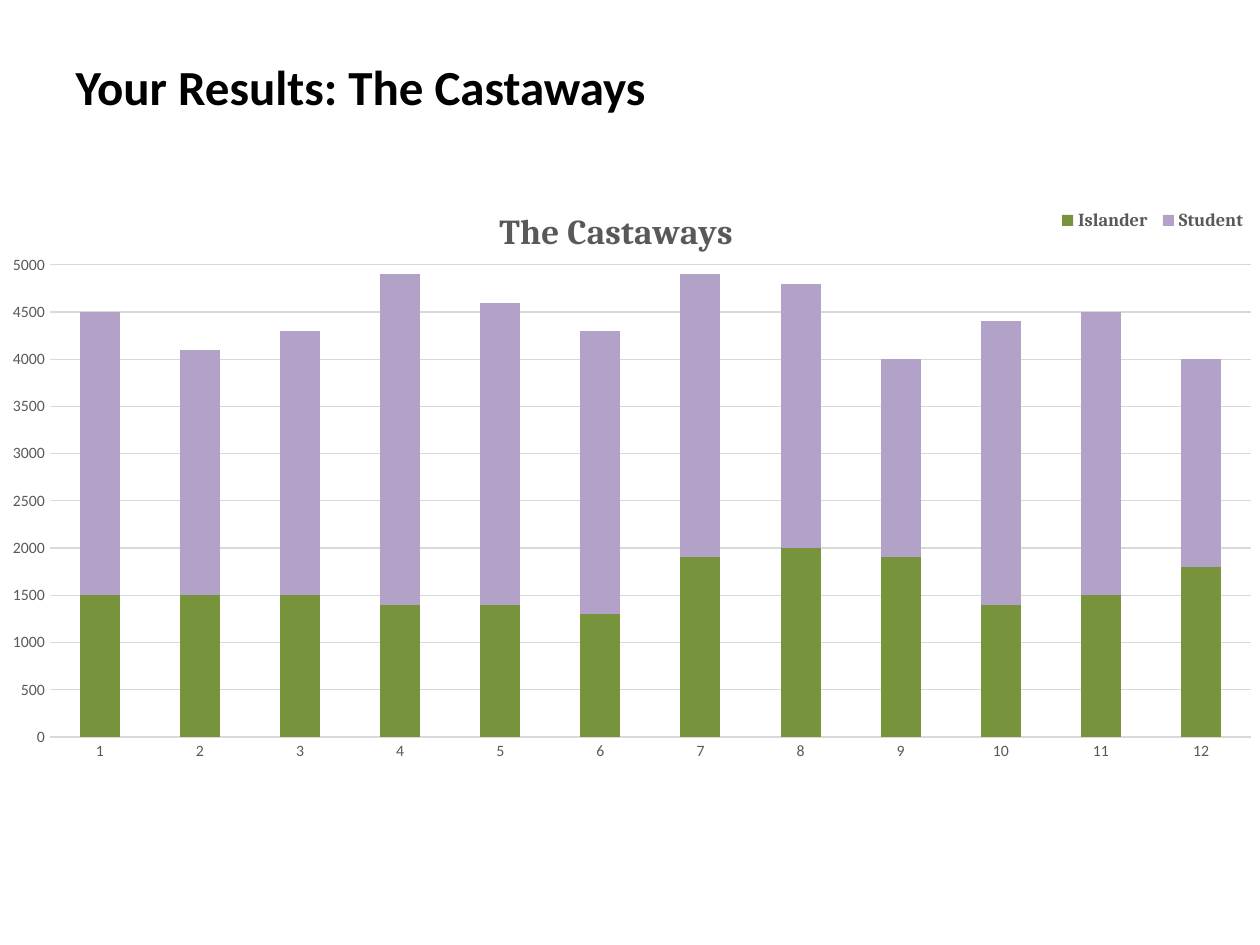
from dataclasses import dataclass

import lxml.etree
import pptx
import pptx.chart.data
import pptx.dml.color
import pptx.enum.chart
import pptx.enum.text
import pptx.oxml.ns
import pptx.util

Inches = pptx.util.Inches
Pt = pptx.util.Pt
GREY = "595959"
GRID = "D9D9D9"


@dataclass
class Group:
    name: str
    values: list[int]
    color: str


@dataclass
class Region:
    element: str
    position: int
    fractions: dict[str, float]
    inner: bool = False


GROUPS = [
    Group("Islander", [1500, 1500, 1500, 1400, 1400, 1300,
                       1900, 2000, 1900, 1400, 1500, 1800], "77933C"),
    Group("Student", [3000, 2600, 2800, 3500, 3200, 3000,
                      3000, 2800, 2100, 3000, 3000, 2200], "B3A2C7"),
]
REGIONS = [
    Region("c:title", 1, {"x": 0.39, "y": 0.03}),
    Region("c:plotArea", 0, {"x": 0.034, "y": 0.136, "w": 0.965, "h": 0.806}, True),
    Region("c:legend", 1, {"x": 0.84, "y": 0.03, "w": 0.16, "h": 0.06}),
]


def rgb(color: str) -> pptx.dml.color.RGBColor:
    return pptx.dml.color.RGBColor.from_string(color)


def style_font(font, name: str, size: float, color: str, bold: bool = False) -> None:
    font.name = name
    font.size = Pt(size)
    font.bold = bold
    font.color.rgb = rgb(color)


def place_region(chart, region: Region) -> None:
    qn = pptx.oxml.ns.qn
    parent = chart.element.find(f"{qn('c:chart')}/{qn(region.element)}")
    for old in parent.findall(qn("c:layout")):
        parent.remove(old)
    layout = lxml.etree.Element(qn("c:layout"))
    parent.insert(region.position, layout)
    manual = lxml.etree.SubElement(layout, qn("c:manualLayout"))
    settings = {"layoutTarget": "inner"} if region.inner else {}
    settings |= {"xMode": "edge", "yMode": "edge"} | region.fractions
    for key, value in settings.items():
        lxml.etree.SubElement(manual, qn(f"c:{key}"), val=str(value))


def style_axis(axis) -> None:
    style_font(axis.tick_labels.font, "Calibri", 9, GREY)
    axis.major_tick_mark = pptx.enum.chart.XL_TICK_MARK.NONE
    axis.minor_tick_mark = pptx.enum.chart.XL_TICK_MARK.NONE


def add_results_chart(slide) -> None:
    results = pptx.chart.data.CategoryChartData()
    results.categories = [str(number) for number in range(1, 13)]
    for group in GROUPS:
        results.add_series(group.name, group.values)
    chart = slide.shapes.add_chart(
        pptx.enum.chart.XL_CHART_TYPE.COLUMN_STACKED,
        Inches(0.06), Inches(1.47), Inches(9.88), Inches(4.65), results).chart
    style_font(chart.font, "Calibri", 10, "000000")

    chart.has_title = True
    heading = chart.chart_title.text_frame
    heading.text = "The Castaways"
    style_font(heading.paragraphs[0].font, "Cambria", 20, GREY, True)

    chart.has_legend = True
    chart.legend.position = pptx.enum.chart.XL_LEGEND_POSITION.BOTTOM
    chart.legend.include_in_layout = False
    style_font(chart.legend.font, "Cambria", 10.5, GREY, True)

    columns = chart.plots[0]
    columns.gap_width = 150
    columns.overlap = 100
    columns.vary_by_categories = False
    for series, group in zip(columns.series, GROUPS):
        series.format.fill.solid()
        series.format.fill.fore_color.rgb = rgb(group.color)

    for axis in (chart.category_axis, chart.value_axis):
        style_axis(axis)
    baseline = chart.category_axis.format.line
    gridlines = chart.value_axis.major_gridlines.format.line
    for line in (baseline, gridlines):
        line.color.rgb = rgb(GRID)
        line.width = Pt(0.75)
    chart.value_axis.format.line.fill.background()
    chart.value_axis.minimum_scale = 0
    chart.value_axis.maximum_scale = 5000
    chart.value_axis.major_unit = 500

    for region in REGIONS:
        place_region(chart, region)


def main() -> None:
    deck = pptx.Presentation()
    deck.slide_width, deck.slide_height = Inches(10), Inches(7.5)
    slide = deck.slides.add_slide(deck.slide_layouts[5])

    title = slide.shapes.title
    title.left, title.top = Inches(0.5), Inches(0.06)
    title.width, title.height = Inches(9), Inches(1.25)
    title.text_frame.text = "Your Results: The Castaways"
    title.text_frame.vertical_anchor = pptx.enum.text.MSO_ANCHOR.MIDDLE
    paragraph = title.text_frame.paragraphs[0]
    paragraph.alignment = pptx.enum.text.PP_ALIGN.LEFT
    style_font(paragraph.font, "Calibri", 28, "000000", True)

    add_results_chart(slide)
    deck.save("out.pptx")


if __name__ == "__main__":
    main()
